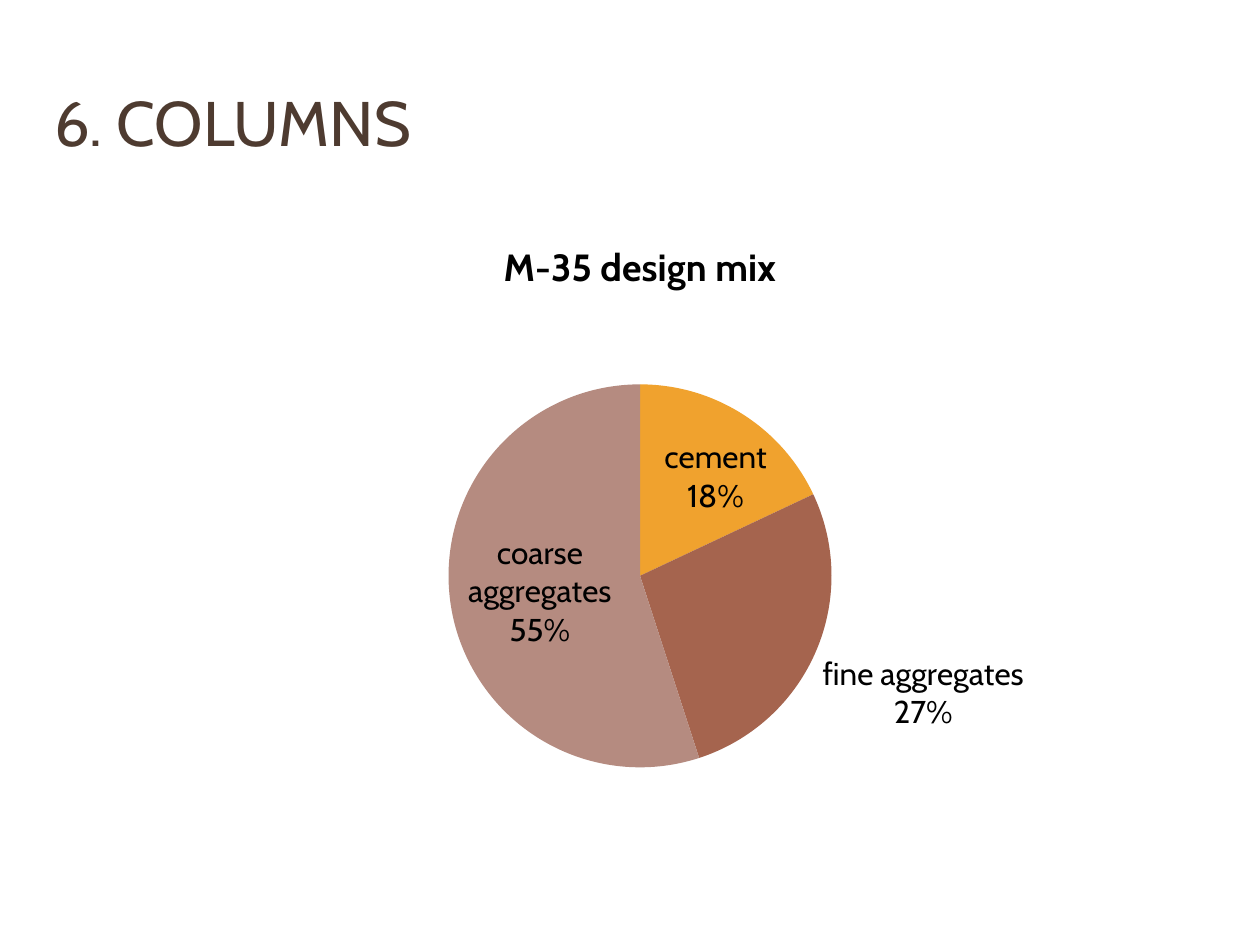
"""Build a slide with a pie chart of the M-35 column design mix."""
from lxml.etree import SubElement
from pptx import Presentation
from pptx.chart.data import CategoryChartData
from pptx.dml.color import RGBColor
from pptx.enum.chart import XL_CHART_TYPE, XL_LABEL_POSITION
from pptx.enum.text import MSO_ANCHOR, PP_ALIGN
from pptx.oxml.ns import qn
from pptx.util import Inches, Pt

FONT = "Cabin"
COLORS = {
    "heading": "4E3B30",
    "text": "000000",
    "cement": "F0A22E",
    "fine aggregates": "A5644E",
    "coarse aggregates": "B58B80",
}
MIX = {"cement": 18, "fine aggregates": 27, "coarse aggregates": 55}
PIE_AREA = {"x": 0.34, "y": 0.27, "w": 0.32, "h": 0.62}


def style_font(font, size, color, bold=False):
    font.name = FONT
    font.size = Pt(size)
    font.bold = bold
    font.color.rgb = RGBColor.from_string(COLORS[color])


prs = Presentation()
prs.slide_width, prs.slide_height = Inches(10), Inches(7.5)
slide = prs.slides.add_slide(prs.slide_layouts[5])

heading = slide.shapes.title
heading.left, heading.top = Inches(0.33), Inches(0.5)
heading.width, heading.height = Inches(9.5), Inches(0.92)
heading.text_frame.text = "6. COLUMNS"
heading.text_frame.vertical_anchor = MSO_ANCHOR.MIDDLE
heading_line = heading.text_frame.paragraphs[0]
heading_line.alignment = PP_ALIGN.LEFT
style_font(heading_line.runs[0].font, 36, "heading")

mix_data = CategoryChartData()
mix_data.categories = list(MIX)
mix_data.add_series("M-35 design mix", list(MIX.values()))
mix_chart = slide.shapes.add_chart(
    XL_CHART_TYPE.PIE, Inches(0.33), Inches(1.7), Inches(9.5), Inches(4.95), mix_data
).chart
style_font(mix_chart.font, 18, "text")
mix_chart.has_legend = False
mix_chart.has_title = True
mix_title = mix_chart.chart_title.text_frame
mix_title.text = "M-35 design mix"
style_font(mix_title.paragraphs[0].runs[0].font, 21.6, "text", bold=True)

pie = mix_chart.plots[0]
pie.vary_by_categories = True
for index, ingredient in enumerate(MIX):
    slice_fill = pie.series[0].points[index].format.fill
    slice_fill.solid()
    slice_fill.fore_color.rgb = RGBColor.from_string(COLORS[ingredient])

pie.has_data_labels = True
share_labels = pie.data_labels
share_labels.show_category_name = True
share_labels.show_percentage = True
share_labels.show_value = False
share_labels.position = XL_LABEL_POSITION.BEST_FIT
style_font(share_labels.font, 18, "text")

plot_area = mix_chart.element.find(".//" + qn("c:plotArea"))
layout = plot_area.find(qn("c:layout"))
if layout is None:
    layout = SubElement(plot_area, qn("c:layout"))
    plot_area.insert(0, layout)
manual = SubElement(layout, qn("c:manualLayout"))
SubElement(manual, qn("c:layoutTarget")).set("val", "inner")
for axis in "xy":
    SubElement(manual, qn(f"c:{axis}Mode")).set("val", "edge")
for key, share in PIE_AREA.items():
    SubElement(manual, qn(f"c:{key}")).set("val", str(share))

prs.save("out.pptx")
